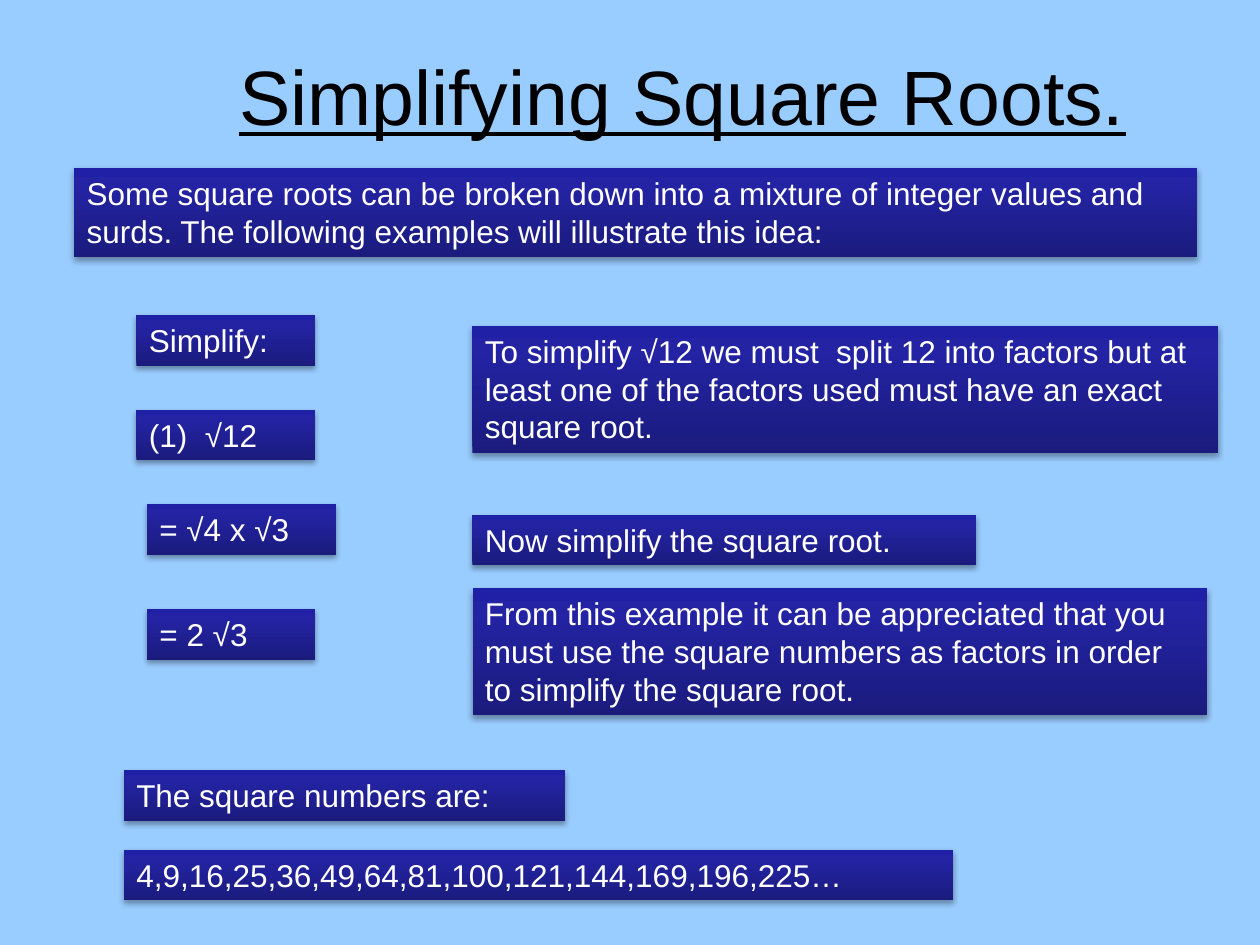
from dataclasses import dataclass

from lxml.etree import SubElement
from pptx import Presentation
from pptx.dml.color import RGBColor
from pptx.enum.shapes import MSO_SHAPE as Shape
from pptx.enum.text import MSO_ANCHOR as Anchor, MSO_AUTO_SIZE as AutoSize, PP_ALIGN as Align
from pptx.oxml.ns import qn
from pptx.util import Pt


@dataclass(frozen=True)
class Theme:
    font: str = "Arial"
    background: str = "99CCFF"
    title_color: str = "000000"
    box_color: str = "FFFFFF"
    title_size: int = 44
    box_size: int = 18
    line_height: float = 21.8
    box_padding: float = 7.2
    gradient: tuple = ((0, "1B1B7E"), (80, "2323A3"), (100, "2020A6"))
    shadow_color: str = "000000"
    shadow_opacity: int = 35
    shadow_blur: float = 3.15
    shadow_distance: float = 1.8


class SlideBuilder:
    def __init__(self, slide, theme):
        self.slide = slide
        self.theme = theme
        background = slide.background.fill
        background.solid()
        background.fore_color.rgb = RGBColor.from_string(theme.background)

    def add_run(self, paragraph, text, size, color, underline=None):
        run = paragraph.add_run()
        run.text = text
        run.font.name = self.theme.font
        run.font.size = Pt(size)
        run.font.underline = underline
        run.font.color.rgb = RGBColor.from_string(color)

    def add_title(self, text, left, top, width, height):
        shape = self.slide.shapes.add_textbox(Pt(left), Pt(top), Pt(width), Pt(height))
        frame = shape.text_frame
        frame.word_wrap = True
        frame.vertical_anchor = Anchor.MIDDLE
        paragraph = frame.paragraphs[0]
        paragraph.alignment = Align.CENTER
        self.add_run(paragraph, text, self.theme.title_size, self.theme.title_color, True)

    def add_box(self, text, left, top, width, lines=1):
        height = self.theme.box_padding + lines * self.theme.line_height
        shape = self.slide.shapes.add_shape(
            Shape.RECTANGLE, Pt(left), Pt(top), Pt(width), Pt(height))
        shape.line.fill.background()
        self.apply_gradient(shape)
        self.apply_shadow(shape)
        frame = shape.text_frame
        frame.word_wrap = True
        frame.auto_size = AutoSize.SHAPE_TO_FIT_TEXT
        frame.vertical_anchor = Anchor.TOP
        paragraph = frame.paragraphs[0]
        paragraph.alignment = Align.LEFT
        self.add_run(paragraph, text, self.theme.box_size, self.theme.box_color)

    def apply_gradient(self, shape):
        shape.fill.gradient()
        shape.fill.gradient_angle = 90
        stops = next(shape.element.spPr.iter(qn("a:gsLst")))
        for stop in list(stops):
            stops.remove(stop)
        for position, color in self.theme.gradient:
            stop = SubElement(stops, qn("a:gs"), pos=str(position * 1000))
            SubElement(stop, qn("a:srgbClr"), val=color)

    def apply_shadow(self, shape):
        theme = self.theme
        shape.shadow.inherit = False
        effects = shape.element.spPr.find(qn("a:effectLst"))
        shadow = SubElement(
            effects, qn("a:outerShdw"), blurRad=str(Pt(theme.shadow_blur)),
            dist=str(Pt(theme.shadow_distance)), dir="5400000", rotWithShape="0")
        color = SubElement(shadow, qn("a:srgbClr"), val=theme.shadow_color)
        SubElement(color, qn("a:alpha"), val=str(theme.shadow_opacity * 1000))


def main():
    presentation = Presentation()
    presentation.slide_width = Pt(720)
    presentation.slide_height = Pt(540)
    slide = presentation.slides.add_slide(presentation.slide_layouts[6])
    builder = SlideBuilder(slide, Theme())

    problem_left, working_left, note_left, squares_left = 78, 84, 270, 70.8
    builder.add_title("Simplifying Square Roots.", working_left, 24, 612, 60)
    boxes = [
        ("Some square roots can be broken down into a mixture of integer values and surds. "
         "The following examples will illustrate this idea:", 42.4, 96, 641.6, 2),
        ("Simplify:", problem_left, 180, 102),
        ("(1)  √12", problem_left, 234, 102),
        ("To simplify √12 we must  split 12 into factors but at least one of the factors "
         "used must have an exact square root.", note_left, 186, 426, 3),
        ("= √4 x √3", working_left, 288, 108),
        ("Now simplify the square root.", note_left, 294, 288),
        ("= 2 √3", working_left, 348, 96),
        ("From this example it can be appreciated that you must use the square numbers as "
         "factors in order to simplify the square root.", note_left, 336, 420, 3),
        ("The square numbers are:", squares_left, 440, 252),
        ("4,9,16,25,36,49,64,81,100,121,144,169,196,225…", squares_left, 485.5, 474),
    ]
    for box in boxes:
        builder.add_box(*box)
    presentation.save("out.pptx")


if __name__ == "__main__":
    main()
